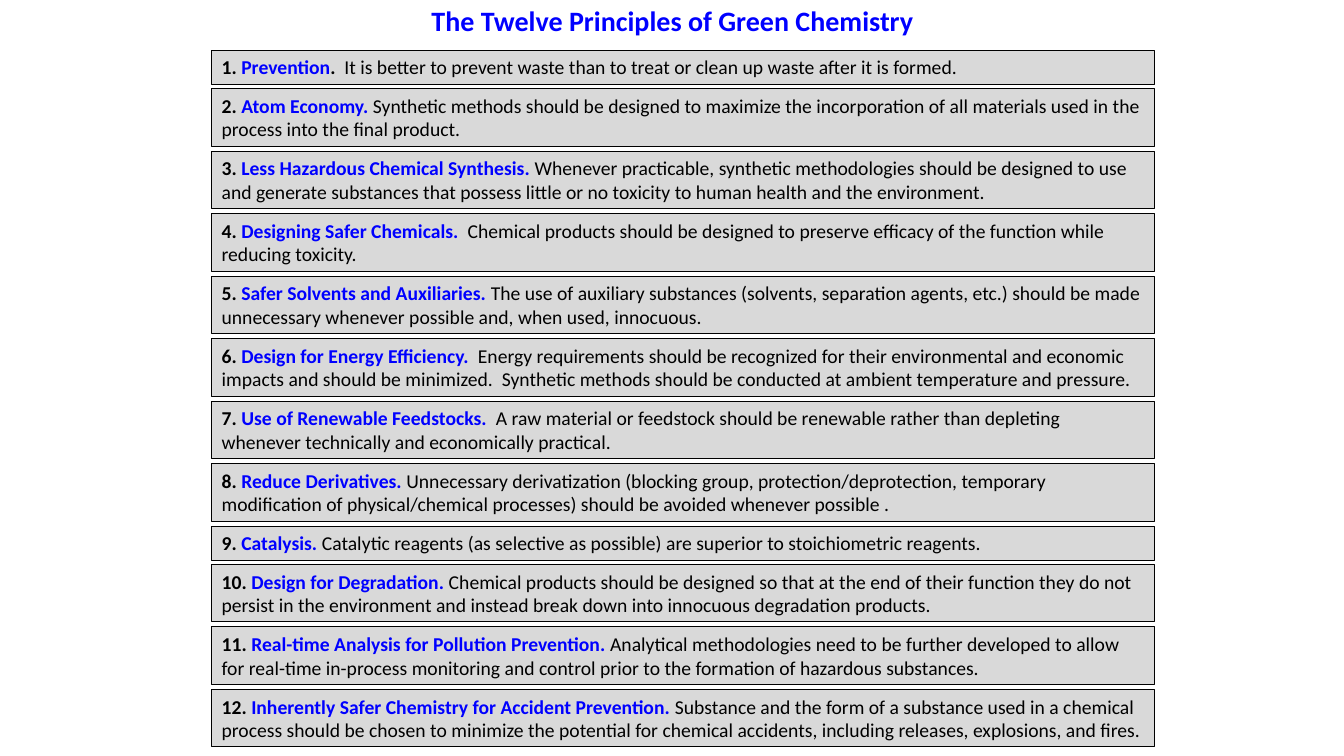
from pptx import Presentation
from pptx import util as u
from pptx.dml.color import RGBColor
from pptx.enum import shapes, text

TITLE = "The Twelve Principles of Green Chemistry"
PRINCIPLES = [
    (1, "Prevention", ".", "  It is better to prevent waste than to treat or clean up waste after it is formed."),
    (2, "Atom Economy.", "", " Synthetic methods should be designed to maximize the incorporation of all "
     "materials used in the process into the final product."),
    (2, "Less Hazardous Chemical Synthesis.", "", " Whenever practicable, synthetic methodologies should be "
     "designed to use and generate substances that possess little or no toxicity to human health and the environment."),
    (2, "Designing Safer Chemicals.", "", "  Chemical products should be designed to preserve efficacy of the "
     "function while reducing toxicity."),
    (2, "Safer Solvents and Auxiliaries.", "", " The use of auxiliary substances (solvents, separation agents, "
     "etc.) should be made unnecessary whenever possible and, when used, innocuous."),
    (2, "Design for Energy Efficiency.", "", "  Energy requirements should be recognized for their environmental "
     "and economic impacts and should be minimized.  Synthetic methods should be conducted at ambient temperature "
     "and pressure."),
    (2, "Use of Renewable Feedstocks.", "", "  A raw material or feedstock should be renewable rather than "
     "depleting whenever technically and economically practical."),
    (2, "Reduce Derivatives.", "", " Unnecessary derivatization (blocking group, protection/deprotection, "
     "temporary modification of physical/chemical processes) should be avoided whenever possible ."),
    (1, "Catalysis.", "", " Catalytic reagents (as selective as possible) are superior to stoichiometric reagents."),
    (2, "Design for Degradation.", "", " Chemical products should be designed so that at the end of their "
     "function they do not persist in the environment and instead break down into innocuous degradation products."),
    (2, "Real-time Analysis for Pollution Prevention.", "", " Analytical methodologies need to be further "
     "developed to allow for real-time in-process monitoring and control prior to the formation of hazardous "
     "substances."),
    (2, "Inherently Safer Chemistry for Accident Prevention.", "", " Substance and the form of a substance used "
     "in a chemical process should be chosen to minimize the potential for chemical accidents, including releases, "
     "explosions, and fires."),
]
BLUE, BLACK, GRAY = "0000FF", "000000", "D9D9D9"
LEFT, FIRST_TOP, WIDTH = 2.1, 0.5, 9.35
HEIGHT = {1: 0.34, 2: 0.57}
PITCH = {1: 0.38, 2: 0.62}


def color(value):
    return RGBColor.from_string(value)


def prepare(shape, size, alignment):
    frame = shape.text_frame
    frame.word_wrap = True
    frame.auto_size = text.MSO_AUTO_SIZE.SHAPE_TO_FIT_TEXT
    paragraph = frame.paragraphs[0]
    paragraph.alignment = alignment
    paragraph.font.name = "Calibri"
    paragraph.font.size = u.Pt(size)
    return paragraph


def add_run(paragraph, words, fill, bold):
    run = paragraph.add_run()
    run.text = words
    run.font.color.rgb = color(fill)
    run.font.bold = bold


def add_principle(slide, number, top, lines, name, stop, statement):
    shape = slide.shapes.add_shape(
        shapes.MSO_SHAPE.RECTANGLE,
        u.Inches(LEFT), u.Inches(top), u.Inches(WIDTH), u.Inches(HEIGHT[lines]))
    shape.shadow.inherit = False
    shape.fill.solid()
    shape.fill.fore_color.rgb = color(GRAY)
    shape.line.color.rgb = color(BLACK)
    shape.line.width = u.Pt(0.75)
    shape.text_frame.vertical_anchor = text.MSO_ANCHOR.TOP
    paragraph = prepare(shape, 14, text.PP_ALIGN.LEFT)
    add_run(paragraph, f"{number}. ", BLACK, True)
    add_run(paragraph, name, BLUE, True)
    if stop:
        add_run(paragraph, stop, BLACK, True)
    add_run(paragraph, statement, BLACK, False)


def main():
    presentation = Presentation()
    presentation.slide_width = u.Inches(13.33)
    presentation.slide_height = u.Inches(7.5)
    slide = presentation.slides.add_slide(presentation.slide_layouts[6])

    title = slide.shapes.add_textbox(u.Inches(1.67), u.Inches(-0.01), u.Inches(10), u.Inches(0.44))
    add_run(prepare(title, 20, text.PP_ALIGN.CENTER), TITLE, BLUE, True)

    top = FIRST_TOP
    for number, (lines, name, stop, statement) in enumerate(PRINCIPLES, 1):
        add_principle(slide, number, top, lines, name, stop, statement)
        top += PITCH[lines]

    presentation.save("out.pptx")


if __name__ == "__main__":
    main()
